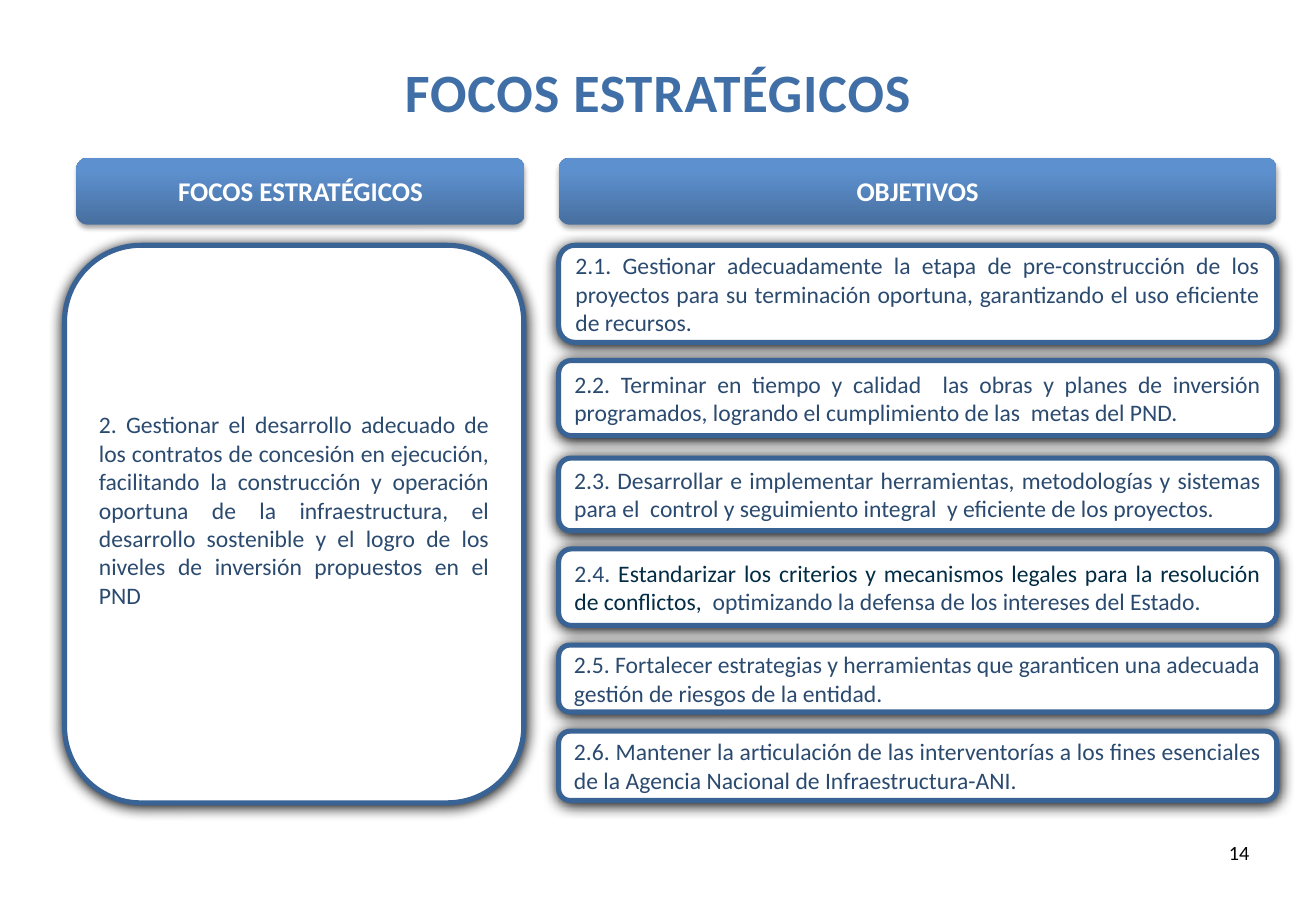
from copy import deepcopy
from dataclasses import dataclass

from lxml.etree import SubElement
from pptx import Presentation
from pptx.dml.color import RGBColor
from pptx.enum.shapes import MSO_SHAPE
from pptx.enum.text import MSO_ANCHOR, PP_ALIGN
from pptx.oxml.ns import qn
from pptx.util import Cm, Pt


@dataclass(frozen=True)
class Theme:
    face: str = "Calibri"
    title: str = "406FA7"
    body: str = "2B4A6F"
    emphasis: str = "022B44"
    border: str = "396395"
    white: str = "FFFFFF"
    black: str = "000000"
    gradient: tuple = ((0, "476F9F"), (0.8, "5D90CE"), (1, "5B91D1"))
    title_size: int = 32
    heading_size: int = 16
    body_size: int = 14
    number_size: int = 12


theme = Theme()


def write(frame, parts, size, color, align, bold=False):
    frame.word_wrap = True
    frame.vertical_anchor = MSO_ANCHOR.MIDDLE
    paragraph = frame.paragraphs[0]
    paragraph.alignment = align
    font = paragraph.font
    font.name, font.size, font.bold = theme.face, Pt(size), bold
    if len(parts) == 1:
        font.color.rgb = RGBColor.from_string(color)
    for text, part_color in parts:
        run = paragraph.add_run()
        run.text = text
        if len(parts) > 1:
            run.font.color.rgb = RGBColor.from_string(part_color)
    return paragraph


def add_panel(left, top, width, height, blur, distance, opacity):
    panel = slide.shapes.add_shape(
        MSO_SHAPE.ROUNDED_RECTANGLE, Cm(left), Cm(top), Cm(width), Cm(height))
    panel.shadow.inherit = False
    effects = panel._element.spPr.find(qn("a:effectLst"))
    shadow = SubElement(effects, qn("a:outerShdw"), blurRad=str(Pt(blur)),
                        dist=str(Pt(distance)), dir="5400000", rotWithShape="0")
    shade = SubElement(shadow, qn("a:srgbClr"), val=theme.black)
    SubElement(shade, qn("a:alpha"), val=str(opacity * 1000))
    return panel


deck = Presentation()
deck.slide_width, deck.slide_height = Cm(27.51), Cm(19.05)
slide = deck.slides.add_slide(deck.slide_layouts[5])

title = slide.shapes.title
title.left, title.top, title.width, title.height = Cm(0), Cm(1.09), Cm(27.51), Cm(1.63)
heading = write(title.text_frame, [("FOCOS ESTRATÉGICOS", theme.title)],
                theme.title_size, theme.title, PP_ALIGN.CENTER, True)
heading.runs[0].font._element.set("spc", "50")

page_number = slide.shapes.add_textbox(Cm(18.95), Cm(17.32), Cm(7.42), Cm(1.02))
write(page_number.text_frame, [("14", theme.black)],
      theme.number_size, theme.black, PP_ALIGN.RIGHT)

for left, width, label in ((1.6, 9.37, "FOCOS ESTRATÉGICOS"), (11.68, 15.01, "OBJETIVOS")):
    header = add_panel(left, 3.3, width, 1.4, 3.1, 1.8, 35)
    header.line.fill.background()
    header.fill.gradient()
    header.fill.gradient_angle = 90
    stop_list = header._element.spPr.find(".//" + qn("a:gsLst"))
    stop_list.append(deepcopy(stop_list[-1]))
    for stop, (position, color) in zip(header.fill.gradient_stops, theme.gradient):
        stop.position = position
        stop.color.rgb = RGBColor.from_string(color)
    write(header.text_frame, [(label, theme.white)],
          theme.heading_size, theme.white, PP_ALIGN.CENTER, True)

justify, flush = PP_ALIGN.JUSTIFY, PP_ALIGN.LEFT
focus = (1.35, 5.13, 9.6, 11.66, 0.73, justify, [
    ("2. Gestionar el desarrollo adecuado de los contratos de concesión en ejecución, "
     "facilitando la construcción y operación oportuna de la infraestructura, el desarrollo "
     "sostenible y el logro de los niveles de inversión propuestos en el PND", theme.body)])
objectives = (
    (5.13, 2.03, justify, [
        ("2.1. Gestionar adecuadamente la etapa de pre-construcción de los proyectos para su "
         "terminación oportuna, garantizando el uso eficiente de recursos. ", theme.body)]),
    (7.54, 1.57, justify, [
        ("2.2. Terminar en tiempo y calidad  las obras y planes de inversión programados, "
         "logrando el cumplimiento de las  metas del PND.", theme.body)]),
    (9.58, 1.52, justify, [
        ("2.3. Desarrollar e implementar herramientas, metodologías y sistemas para el  control "
         "y seguimiento integral  y eficiente de los proyectos.", theme.body)]),
    (11.48, 1.6, justify, [
        ("2.4. ", theme.body),
        ("Estandarizar los criterios y mecanismos legales para la resolución de conflictos,  ",
         theme.emphasis),
        ("optimizando la defensa de los intereses del Estado. ", theme.body)]),
    (13.49, 1.4, flush, [
        ("2.5. Fortalecer estrategias y herramientas que garanticen una adecuada gestión de "
         "riesgos de la entidad.", theme.body)]),
    (15.29, 1.45, justify, [
        ("2.6. Mantener la articulación de las interventorías a los fines esenciales de la "
         "Agencia Nacional de Infraestructura-ANI. ", theme.body)]),
)
cards = [focus] + [(11.68, top, 15.01, height, 0.13, align, parts)
                   for top, height, align, parts in objectives]

for left, top, width, height, bottom_inset, align, parts in cards:
    card = add_panel(left, top, width, height, 8.5, 1, 100)
    card.fill.solid()
    card.fill.fore_color.rgb = RGBColor.from_string(theme.white)
    card.line.color.rgb = RGBColor.from_string(theme.border)
    card.line.width = Pt(3)
    card.text_frame.margin_bottom = Cm(bottom_inset)
    write(card.text_frame, parts, theme.body_size, theme.body, align)

deck.save("out.pptx")
